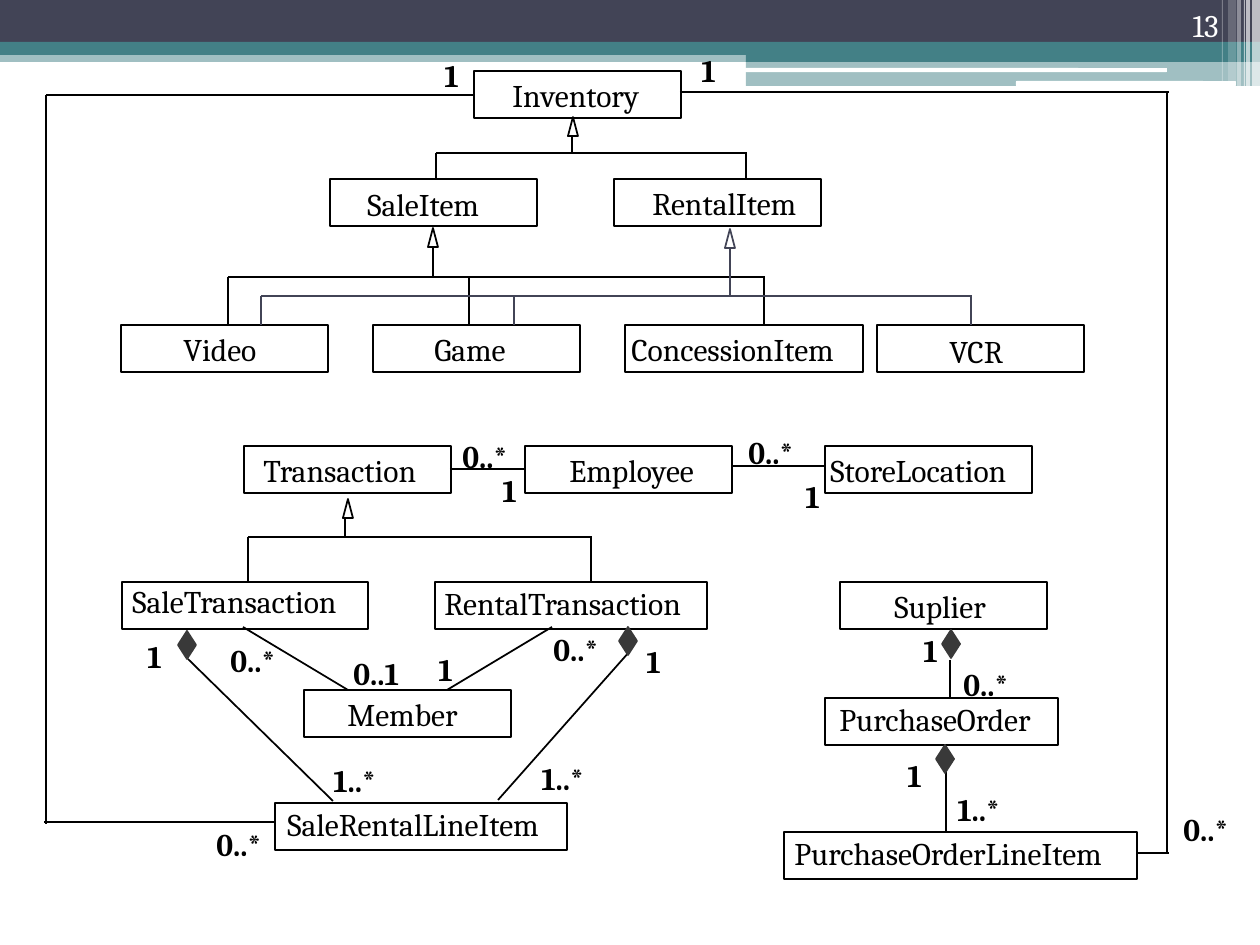
"""Build the video store UML class diagram slide."""
from lxml.etree import SubElement
from pptx import Presentation
from pptx.dml.color import RGBColor
from pptx.enum.shapes import MSO_CONNECTOR as Connector, MSO_SHAPE as Shape
from pptx.enum.text import MSO_ANCHOR as Anchor, MSO_AUTO_SIZE as AutoSize, PP_ALIGN as Align
from pptx.oxml.ns import qn
from pptx.util import Pt

SCALE = 914400 / 126
COLORS = {
    "black": "000000",
    "white": "FFFFFF",
    "navy": "424456",
    "teal": "438086",
    "charcoal": "393939",
}
CLASS_HEIGHT = 47
TEXT_HEIGHT = 50
BANDS = [
    (0, 50, 1260, 12, "teal", 50),
    (0, 0, 1260, 42, "navy", 100),
    (0, 42, 1260, 13, "teal", 100),
    (746, 49, 514, 13, "teal", 100),
    (746, 61, 514, 25, "teal", 50),
]
ROUNDED_BARS = [(745, 68, 422, 4), (1016, 81, 220, 5)]
STRIPES = [
    (1252, 8, 86, 65),
    (1246, 4, 86, 65),
    (1244, 1, 86, 60),
    (1237, 4, 86, 40),
    (1228, 8, 81, 20),
    (1222, 1, 81, 30),
]
CLASSES = [
    ("Inventory", (474, 71, 207), (500, 70, 155)),
    ("SaleItem", (330, 179, 207), (355, 179, 150)),
    ("RentalItem", (614, 179, 207), (640, 178, 178)),
    ("Video", (121, 325, 207), (171, 324, 106)),
    ("Game", (373, 325, 207), (422, 324, 111)),
    ("ConcessionItem", (625, 325, 238), (619, 324, 251)),
    ("VCR", (877, 325, 207), (937, 326, 92)),
    ("Transaction", (244, 446, 207), (251, 445, 190)),
    ("Employee", (525, 446, 207), (557, 445, 165)),
    ("StoreLocation", (825, 446, 207), (818, 445, 219)),
    ("SaleTransaction", (122, 582, 246), (120, 576, 253)),
    ("RentalTransaction", (435, 582, 272), (432, 578, 281)),
    ("Suplier", (840, 582, 207), (882, 581, 123)),
    ("Member", (304, 690, 207), (335, 689, 141)),
    ("PurchaseOrder", (825, 698, 233), (827, 694, 239)),
    ("SaleRentalLineItem", (275, 803, 292), (275, 799, 300)),
    ("PurchaseOrderLineItem", (784, 832, 353), (782, 828, 359)),
]
GENERALIZATIONS = [
    ((568, 117), 572, 153, (436, 746), 179, "black"),
    ((428, 228), 433, 277, (228, 469, 764), 325, "black"),
    ((725, 229), 730, 296, (261, 514, 971), 325, "navy"),
    ((343, 499), 345, 537, (248, 591), 581, "black"),
]
ASSOCIATIONS = [
    (275, 822, 44, 822), (474, 95, 46, 95), (46, 824, 46, 95),
    (680, 92, 1169, 92), (1138, 853, 1169, 853), (1167, 92, 1167, 853),
    (348, 690, 243, 627), (447, 690, 552, 627),
    (333, 801, 188, 659), (498, 800, 630, 651),
    (450, 469, 525, 469), (732, 466, 826, 466),
    (946, 772, 946, 832), (950, 660, 950, 697),
]
DIAMONDS = [(178, 631), (619, 627), (936, 745), (942, 630)]
MULTIPLICITIES = [
    ("1", 43, [(432, 50), (689, 45), (426, 644), (135, 631), (634, 636),
               (490, 465), (793, 471), (895, 750), (911, 625)]),
    ("0..*", 73, [(204, 819), (218, 635), (541, 624), (450, 431),
                  (736, 427), (951, 659), (1171, 804)]),
    ("0..1", 78, [(341, 648)]),
    ("1..*", 73, [(321, 755), (529, 753), (945, 784)]),
]


def emu(*lengths):
    """Convert px lengths to EMU."""
    return [round(length * SCALE) for length in lengths]


def rgb(name):
    """Look up a named colour."""
    return RGBColor.from_string(COLORS[name])


def add_shape(page, kind, bounds, fill=None, line=None, opacity=100):
    """Add a preset shape with optional fill, outline and opacity."""
    shape = page.shapes.add_shape(kind, *emu(*bounds))
    shape.shadow.inherit = False
    if fill:
        shape.fill.solid()
        shape.fill.fore_color.rgb = rgb(fill)
        if opacity < 100:
            color = shape._element.spPr.find(qn("a:solidFill"))[0]
            SubElement(color, qn("a:alpha"), val=str(opacity * 1000))
    else:
        shape.fill.background()
    if line:
        shape.line.color.rgb = rgb(line)
        shape.line.width = Pt(1)
    else:
        shape.line.fill.background()


def add_line(page, ends, color="black"):
    """Add a thin straight line."""
    line = page.shapes.add_connector(Connector.STRAIGHT, *emu(*ends))
    line.line.color.rgb = rgb(color)
    line.line.width = Pt(1)
    SubElement(line._element.spPr, qn("a:effectLst"))


def add_text(page, text, place, color="black", bold=False):
    """Add a one-line text box at left, top, width and return it."""
    box = page.shapes.add_textbox(*emu(*place, TEXT_HEIGHT))
    frame = box.text_frame
    frame.word_wrap = False
    frame.auto_size = AutoSize.SHAPE_TO_FIT_TEXT
    para = frame.paragraphs[0]
    para.text = text
    para.font.name = "Cambria"
    para.font.size = Pt(18)
    para.font.bold = bold
    para.font.color.rgb = rgb(color)
    return box


def add_generalization(page, arrow, stem, bus, drops, bottom, color):
    """Add a hollow arrowhead, its stem, a bus line and the child drops."""
    left, top = arrow
    add_shape(page, Shape.ISOSCELES_TRIANGLE, (left, top, 10, 19), line=color)
    add_line(page, (stem, top + 19, stem, bus), color)
    add_line(page, (drops[0], bus, drops[-1] + 1, bus), color)
    for drop in drops:
        add_line(page, (drop, bus, drop, bottom), color)


def add_header(page):
    """Add the header bands, stripes and page number."""
    for *bounds, color, opacity in BANDS:
        add_shape(page, Shape.RECTANGLE, bounds, color, opacity=opacity)
    for bounds in ROUNDED_BARS:
        add_shape(page, Shape.ROUNDED_RECTANGLE, bounds, "white")
    for left, width, height, opacity in STRIPES:
        add_shape(page, Shape.RECTANGLE, (left, 0, width, height), "white", opacity=opacity)
    number = add_text(page, "13", (1126, 0, 105), "white").text_frame
    number.word_wrap = True
    number.auto_size = AutoSize.NONE
    number.vertical_anchor = Anchor.BOTTOM
    number.paragraphs[0].alignment = Align.RIGHT


def main():
    """Build and save the deck."""
    deck = Presentation()
    deck.slide_width, deck.slide_height = emu(1260, 945)
    page = deck.slides.add_slide(deck.slide_layouts[6])
    add_header(page)
    for name, outline, label in CLASSES:
        add_shape(page, Shape.RECTANGLE, (*outline, CLASS_HEIGHT), line="black")
        add_text(page, name, label)
    for generalization in GENERALIZATIONS:
        add_generalization(page, *generalization)
    for ends in ASSOCIATIONS:
        add_line(page, ends)
    for corner in DIAMONDS:
        add_shape(page, Shape.DIAMOND, (*corner, 18, 28), "charcoal", "charcoal")
    for text, width, corners in MULTIPLICITIES:
        for corner in corners:
            add_text(page, text, (*corner, width), bold=True)
    deck.save("out.pptx")


if __name__ == "__main__":
    main()
